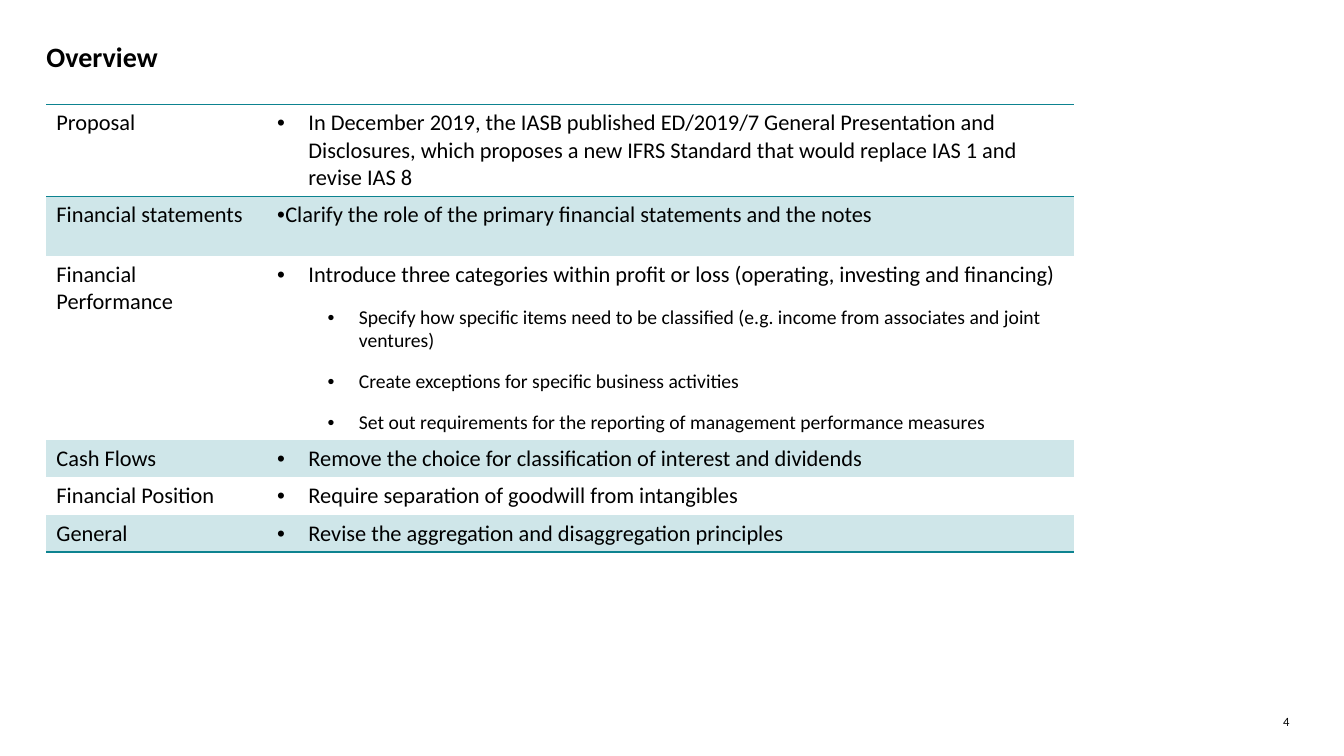
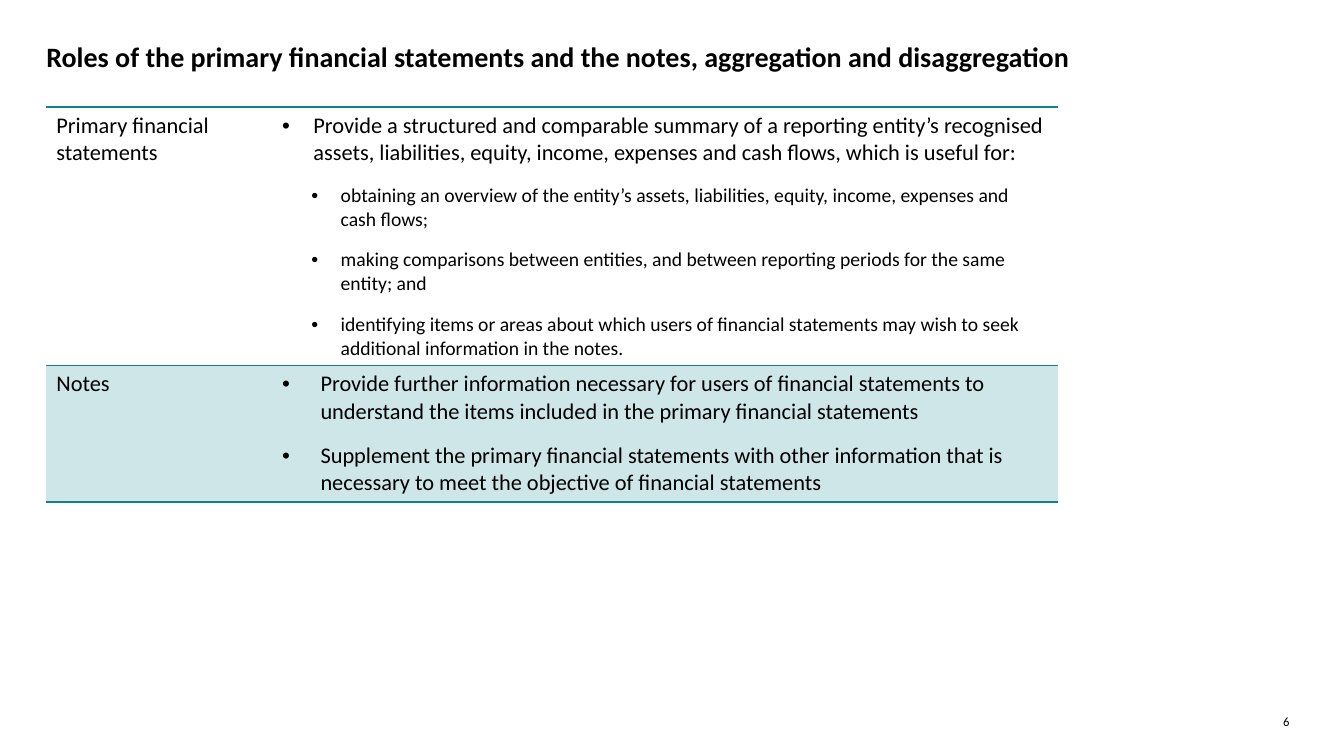
from lxml.etree import SubElement
from pptx import Presentation
from pptx.dml.color import RGBColor
from pptx.enum.text import PP_ALIGN as Align
from pptx.oxml.ns import qn
from pptx.util import Inches, Pt

TEAL = "0D8390"
BAND = "CFE6E9"
BLACK = "000000"
PLAIN_STYLE = "{2D5ABB26-0587-4C30-8999-92F81FD0307C}"

deck = Presentation()
deck.slide_width, deck.slide_height = Inches(13.33), Inches(7.5)
column, row = deck.slide_width / 100, deck.slide_height / 100
LEFT = 3.45

LEVELS = {
    "label": {"size": 16, "margin": 0, "hang": 0},
    "main": {"size": 16, "margin": 0.31, "hang": 0.31},
    "tight": {"size": 16, "margin": 0.08, "hang": 0.08},
    "wide": {"size": 16, "margin": 0.38, "hang": 0.38},
    "sub": {"size": 14, "margin": 0.81, "hang": 0.31},
    "near sub": {"size": 14, "margin": 0.58, "hang": 0.29},
}

FRAME = {"margin_left": 0, "margin_right": 0, "margin_top": 0, "margin_bottom": 0, "word_wrap": True}

PAGES = [
    {
        "title": "Overview",
        "number": "4",
        "top": 13.8,
        "columns": [16.43, 60],
        "rules": {0: {"lnT": 1, "lnB": 1}, 5: {"lnB": 1}},
        "rows": [
            (12.15, "Proposal", [
                ("main", "In December 2019, the IASB published ED/2019/7 General Presentation and Disclosures, "
                         "which proposes a new IFRS Standard that would replace IAS 1 and revise IAS 8")]),
            (7.94, "Financial statements", [
                ("tight", "Clarify the role of the primary financial statements and the notes")]),
            (24.34, "Financial Performance", [
                ("main", "Introduce three categories within profit or loss (operating, investing and financing)"),
                ("sub", "Specify how specific items need to be classified "
                        "(e.g. income from associates and joint ventures)"),
                ("sub", "Create exceptions for specific business activities"),
                ("sub", "Set out requirements for the reporting of management performance measures")]),
            (4.93, "Cash Flows", [
                ("main", "Remove the choice for classification of interest and dividends")]),
            (4.93, "Financial Position", [
                ("main", "Require separation of goodwill from intangibles")]),
            (4.93, "General", [
                ("main", "Revise the aggregation and disaggregation principles")]),
        ],
    },
    {
        "title": "Roles of the primary financial statements and the notes, aggregation and disaggregation",
        "number": "6",
        "top": 14.15,
        "columns": [16.8, 58.5],
        "rules": {0: {"lnT": 1.5, "lnB": 0.5}, 1: {"lnB": 1.5}},
        "rows": [
            (34.2, "Primary financial statements", [
                ("main", "Provide a structured and comparable summary of a reporting entity’s recognised assets, "
                         "liabilities, equity, income, expenses and cash flows, which is useful for:"),
                ("near sub", "obtaining an overview of the entity’s assets, liabilities, equity, income, "
                             "expenses and cash flows;"),
                ("near sub", "making comparisons between entities, and between reporting periods "
                             "for the same entity; and"),
                ("near sub", "identifying items or areas about which users of financial statements may wish "
                             "to seek additional information in the notes.")]),
            (18.06, "Notes", [
                ("wide", "Provide further information necessary for users of financial statements to understand "
                         "the items included in the primary financial statements"),
                ("wide", "Supplement the primary financial statements with other information that is necessary "
                         "to meet the objective of financial statements")]),
        ],
    },
]


def color(value):
    return RGBColor.from_string(value)


def write(para, text, size, bold=False):
    span = para.add_run()
    span.text = text
    for name, setting in {"name": "Calibri", "size": Pt(size), "bold": bold}.items():
        setattr(span.font, name, setting)
    span.font.color.rgb = color(BLACK)


for content in PAGES:
    page = deck.slides.add_slide(deck.slide_layouts[6])

    for text, (left, top, width, height), size, bold, align in [
        (content["number"], (93.4, 94.4, 2.55, 2), 9, False, Align.RIGHT),
        (content["title"], (LEFT, 5.2, 91.6, 10.13), 20, True, Align.LEFT),
    ]:
        box = page.shapes.add_textbox(
            int(left * column), int(top * row), int(width * column), int(height * row))
        for name, setting in FRAME.items():
            setattr(box.text_frame, name, setting)
        para = box.text_frame.paragraphs[0]
        para.alignment = align
        write(para, text, size, bold)

    rows, widths = content["rows"], content["columns"]
    table = page.shapes.add_table(
        len(rows), len(widths), int(LEFT * column), int(content["top"] * row),
        int(sum(widths) * column), int(sum(entry[0] for entry in rows) * row)).table
    table.first_row = table.horz_banding = False
    table._tbl.tblPr.find(qn("a:tableStyleId")).text = PLAIN_STYLE
    for index, width in enumerate(widths):
        table.columns[index].width = int(width * column)

    for index, (height, label, points) in enumerate(rows):
        table.rows[index].height = int(height * row)
        for cell, lines in zip(table.rows[index].cells, [[("label", label)], points]):
            properties = cell._tc.get_or_add_tcPr()
            for side, weight in content["rules"].get(index, {}).items():
                line = SubElement(properties, qn(f"a:{side}"), w=str(Pt(weight)))
                SubElement(SubElement(line, qn("a:solidFill")), qn("a:srgbClr"), val=TEAL)
            if index % 2:
                cell.fill.solid()
                cell.fill.fore_color.rgb = color(BAND)
            else:
                cell.fill.background()

            frame = cell.text_frame
            for position, (level, text) in enumerate(lines):
                para = frame.add_paragraph() if position else frame.paragraphs[0]
                layout = LEVELS[level]
                para.space_before = Pt(12 if position else 0)
                if layout["hang"]:
                    indent = para._p.get_or_add_pPr()
                    indent.set("marL", str(Inches(layout["margin"])))
                    indent.set("indent", str(-Inches(layout["hang"])))
                    SubElement(indent, qn("a:buFont"), typeface="Arial")
                    SubElement(indent, qn("a:buChar"), char="•")
                write(para, text, layout["size"])

deck.save("out.pptx")
